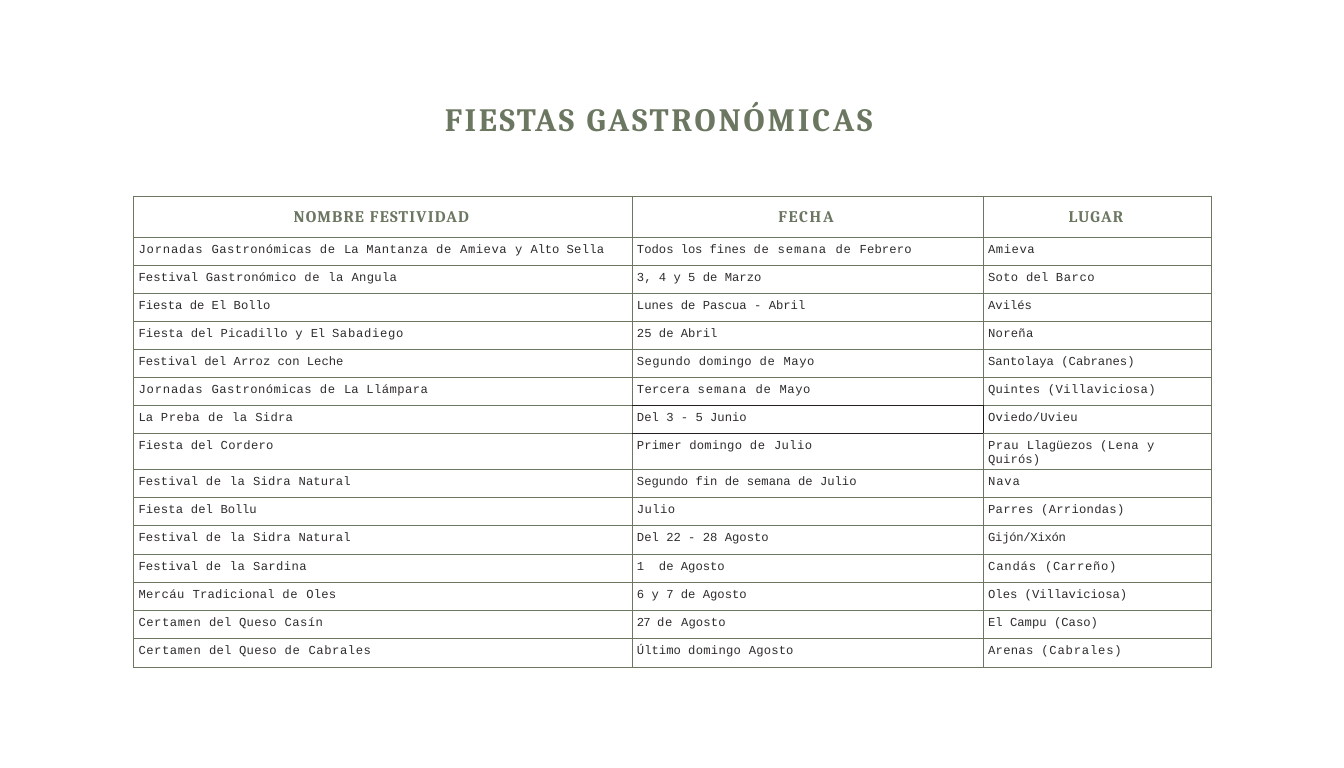
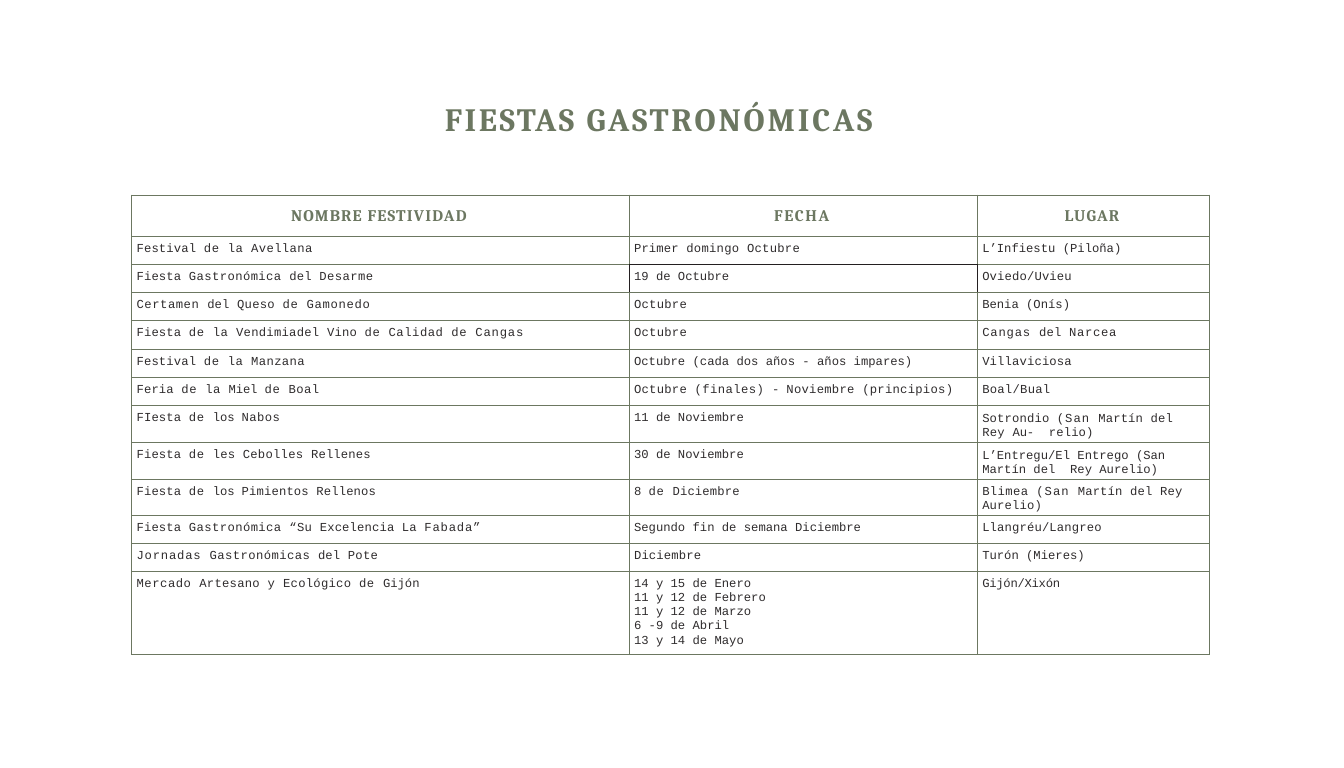
import itertools

import pptx
import pptx.dml.color
import pptx.enum.text
import pptx.oxml
import pptx.oxml.ns
import pptx.util

Inches, Pt = pptx.util.Inches, pptx.util.Pt
ALIGN = pptx.enum.text.PP_ALIGN

# Shared look
SLIDE_WIDTH, SLIDE_HEIGHT = Pt(992), Pt(567)
GREEN, INK, DARK = "6C7761", "2F2C2D", "231F20"
TITLE_STYLE = dict(font="Cambria", size=24, color=GREEN, bold=True, before=1, indent=0.05)
HEADER_STYLE = dict(font="Cambria", size=12, color=GREEN, bold=True, before=8.6,
                    indent=0.02, align=ALIGN.CENTER)
BODY_STYLE = dict(font="Courier New", size=9, color=INK, before=4.5, indent=0.05)
COMPACT_STYLE = dict(BODY_STYLE, before=5.5, line=10, right_indent=0.2)
HEADER_HEIGHT, ROW_HEIGHT, TWO_LINE_HEIGHT = 0.42, 0.29, 0.38
PLACE_COLUMN = 2

# Letter spacing in points for each word; words not listed take the default
DEFAULT_TRACKING = 0.1
TRACKED_WORDS = {
    -0.7: "27",
    -0.3: "El",
    -0.2: "Gijón/Xixón -",
    -0.1: "los Alto Bollu Miel Au- 8",
    0: "Todos fines Último Llagüezos Gijón",
    0.2: "Sella Gastronómico Angula Soto Noreña domingo Tercera Sidra Cordero Parres "
         "(Arriondas) Queso Arenas Octubre Vendimiadel Noviembre (principios) Rey "
         "Cebolles “Su Pote Artesano Ecológico Boal/Bual",
    0.3: "Gastronómicas Gastronómica Mantanza y la Segundo Llámpara (Villaviciosa) Prau "
         "Julio Sardina Mercáu Casín Avellana Desarme Manzana Boal (finales) Nabos Blimea",
    0.4: "Amieva Barco Mayo Preba (Lena Certamen Cabrales Calidad Mercado",
    0.5: "de Sabadiego (Carreño) Gamonedo Narcea",
    0.6: "Jornadas Nava Candás (Cabrales) Cangas Fabada”",
    0.7: "semana (San",
    0.8: "NOMBRE",
    0.9: "FESTIVIDAD LUGAR",
    1.2: "FECHA",
    1.9: "FIESTAS",
    2.1: "GASTRONÓMICAS",
}
TRACKING = {word: points for points, words in TRACKED_WORDS.items() for word in words.split()}

# Content: a cell given as (text, points) has one letter spacing throughout
TITLE = "FIESTAS GASTRONÓMICAS"
HEADERS = ("NOMBRE FESTIVIDAD ", "FECHA ", "LUGAR ")

WINTER_TO_SUMMER = [
    ("Jornadas Gastronómicas de La Mantanza de Amieva y Alto Sella",
     "Todos los fines de semana de Febrero", "Amieva"),
    ("Festival Gastronómico de la Angula", ("3, 4 y 5 de Marzo", 0), "Soto del Barco"),
    (("Fiesta de El Bollo", 0), ("Lunes de Pascua - Abril", 0), ("Avilés", 0)),
    ("Fiesta del Picadillo y El Sabadiego", ("25 de Abril", 0), "Noreña"),
    (("Festival del Arroz con Leche", 0), "Segundo domingo de Mayo",
     ("Santolaya (Cabranes)", 0)),
    ("Jornadas Gastronómicas de La Llámpara", "Tercera semana de Mayo",
     "Quintes (Villaviciosa)"),
    ("La Preba de la Sidra", ("Del 3 - 5 Junio", 0), "Oviedo/Uvieu"),
    ("Fiesta del Cordero", "Primer domingo de Julio", "Prau Llagüezos (Lena y Quirós)"),
    ("Festival de la Sidra Natural", ("Segundo fin de semana de Julio", 0), "Nava"),
    ("Fiesta del Bollu", "Julio", "Parres (Arriondas)"),
    ("Festival de la Sidra Natural", ("Del 22 - 28 Agosto", 0), "Gijón/Xixón"),
    ("Festival de la Sardina", ("1  de Agosto", 0), "Candás (Carreño)"),
    ("Mercáu Tradicional de Oles", ("6 y 7 de Agosto", 0), ("Oles (Villaviciosa)", 0)),
    ("Certamen del Queso Casín", "27 de Agosto", ("El Campu (Caso)", 0)),
    ("Certamen del Queso de Cabrales", "Último domingo Agosto", "Arenas (Cabrales)"),
]
AUTUMN_TO_SPRING = [
    ("Festival de la Avellana", "Primer domingo Octubre", ("L’Infiestu (Piloña)", 0)),
    ("Fiesta Gastronómica del Desarme", ("19 de Octubre", 0), "Oviedo/Uvieu"),
    ("Certamen del Queso de Gamonedo", "Octubre", ("Benia (Onís)", 0)),
    ("Fiesta de la Vendimiadel Vino de Calidad de Cangas", "Octubre", "Cangas del Narcea"),
    ("Festival de la Manzana", ("Octubre (cada dos años - años impares)", 0),
     "Villaviciosa"),
    ("Feria de la Miel de Boal", "Octubre (finales) - Noviembre (principios)", "Boal/Bual"),
    ("FIesta de los Nabos", ("11 de Noviembre", 0),
     "Sotrondio (San Martín del Rey Au-  relio)"),
    ("Fiesta de les Cebolles Rellenes", ("30 de Noviembre", 0),
     ("L’Entregu/El Entrego (San Martín del  Rey Aurelio)", 0)),
    ("Fiesta de los Pimientos Rellenos", "8 de Diciembre",
     "Blimea (San Martín del Rey Aurelio)"),
    ("Fiesta Gastronómica “Su Excelencia La Fabada”",
     ("Segundo fin de semana Diciembre", 0), "Llangréu/Langreo"),
    ("Jornadas Gastronómicas del Pote", "Diciembre", ("Turón (Mieres)", 0)),
    ("Mercado Artesano y Ecológico de Gijón",
     ("14 y 15 de Enero\n11 y 12 de Febrero\n11 y 12 de Marzo\n"
      "6 -9 de Abril\n13 y 14 de Mayo", 0), "Gijón/Xixón"),
]

# heights: rows that differ from the usual one
# dark: row, column and sides of the one cell outlined in black
SLIDES = [
    dict(festivals=WINTER_TO_SUMMER, origin=(1.37, 2.01), columns=(5.11, 3.6, 2.34),
         heights={4: 0.28}, dark=(7, 1, "TRB")),
    dict(festivals=AUTUMN_TO_SPRING, origin=(1.35, 2), columns=(5.1, 3.57, 2.38),
         heights={7: TWO_LINE_HEIGHT, 8: TWO_LINE_HEIGHT, 12: 0.85}, dark=(2, 1, "LTR")),
]
NEIGHBOURS = {"L": (0, -1, "R"), "R": (0, 1, "L"), "T": (-1, 0, "B"), "B": (1, 0, "T")}


def rgb(color):
    return pptx.dml.color.RGBColor.from_string(color)


def tracked_pieces(line, tracking):
    """Split a line into pieces that share one letter spacing."""
    if tracking is not None:
        return [(line, tracking)]
    words = line.split(" ")
    spaced = [word + " " for word in words[:-1]] + [word for word in words[-1:] if word]
    groups = itertools.groupby(
        spaced, key=lambda word: TRACKING.get(word.strip(), DEFAULT_TRACKING))
    return [("".join(group), points) for points, group in groups]


def write_text(frame, content, font, size, color, bold=False, before=0, indent=0,
               right_indent=0, align=ALIGN.LEFT, line=None):
    text, tracking = (content, None) if isinstance(content, str) else content
    for index, text_line in enumerate(text.split("\n")):
        paragraph = frame.add_paragraph() if index else frame.paragraphs[0]
        paragraph.alignment = align
        paragraph.space_before = Pt(0.2 if index else before)
        if line:
            paragraph.line_spacing = Pt(line)
        properties = paragraph._p.get_or_add_pPr()
        properties.set("marL", str(Inches(indent)))
        properties.set("marR", str(Inches(right_indent)))
        for piece, points in tracked_pieces(text_line, tracking):
            run = paragraph.add_run()
            run.text = piece
            run.font.name, run.font.size, run.font.bold = font, Pt(size), bold
            run.font.color.rgb = rgb(color)
            run._r.get_or_add_rPr().set("spc", str(round(points * 100)))


def draw_borders(cell, dark_sides):
    properties = cell._tc.get_or_add_tcPr()
    for index, side in enumerate("LRTB"):
        color = DARK if side in dark_sides else GREEN
        properties.insert(index, pptx.oxml.parse_xml(
            f'<a:ln{side} {pptx.oxml.ns.nsdecls("a")} w="{Pt(0.5)}"><a:solidFill>'
            f'<a:srgbClr val="{color}"/></a:solidFill></a:ln{side}>'))


def dark_edges(row, column, sides):
    """Both faces of every black edge, as (row, column, side)."""
    edges = set()
    for side in sides:
        down, across, facing = NEIGHBOURS[side]
        edges |= {(row, column, side), (row + down, column + across, facing)}
    return edges


def add_title(slide):
    box = slide.shapes.add_textbox(Inches(4.51), Inches(1.01), Inches(4.76), Inches(0.43))
    frame = box.text_frame
    frame.word_wrap = True
    frame.margin_left = frame.margin_right = frame.margin_bottom = 0
    frame.margin_top = Inches(0.01)
    write_text(frame, TITLE, **TITLE_STYLE)


def add_festival_table(slide, festivals, origin, columns, heights, dark):
    rows = [HEADERS] + festivals
    row_heights = [HEADER_HEIGHT] + [heights.get(row, ROW_HEIGHT)
                                     for row in range(1, len(rows))]
    left, top = origin
    table = slide.shapes.add_table(
        len(rows), len(columns), Inches(left), Inches(top),
        Inches(sum(columns)), Inches(sum(row_heights))).table
    table.first_row = table.horz_banding = False
    for column, width in zip(table.columns, columns):
        column.width = Inches(width)
    edges = dark_edges(*dark)
    for row, (height, contents) in enumerate(zip(row_heights, rows)):
        table.rows[row].height = Inches(height)
        for column, content in enumerate(contents):
            if row == 0:
                style = HEADER_STYLE
            elif height == TWO_LINE_HEIGHT and column == PLACE_COLUMN:
                style = COMPACT_STYLE
            else:
                style = BODY_STYLE
            cell = table.cell(row, column)
            cell.margin_left = cell.margin_right = cell.margin_bottom = 0
            cell.margin_top = Pt(style["before"])
            cell.fill.background()
            draw_borders(cell, [side for side in "LRTB" if (row, column, side) in edges])
            write_text(cell.text_frame, content, **style)


def main():
    presentation = pptx.Presentation()
    presentation.slide_width = SLIDE_WIDTH
    presentation.slide_height = SLIDE_HEIGHT
    for content in SLIDES:
        slide = presentation.slides.add_slide(presentation.slide_layouts[6])
        add_title(slide)
        add_festival_table(slide, **content)
    presentation.save("out.pptx")


if __name__ == "__main__":
    main()
